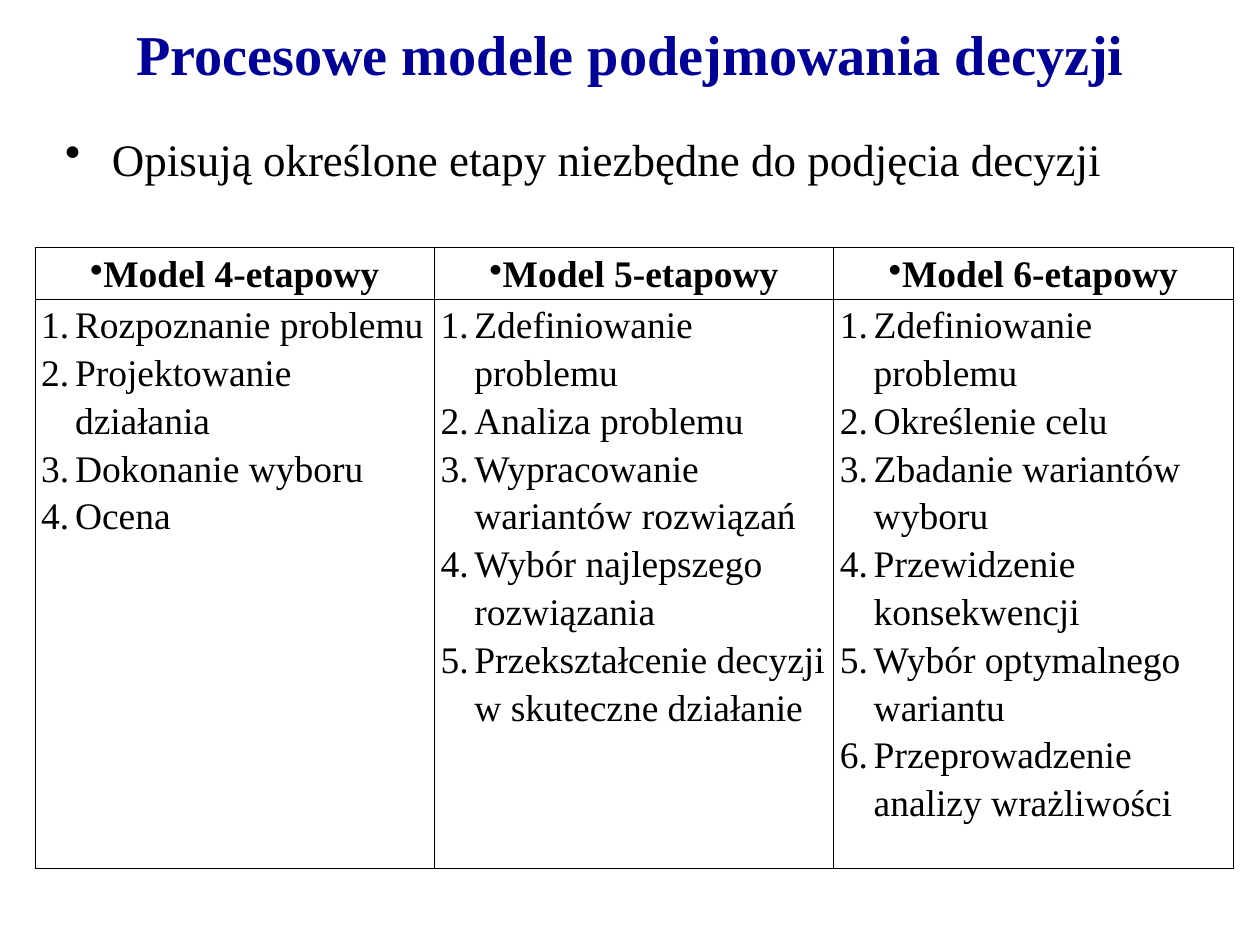
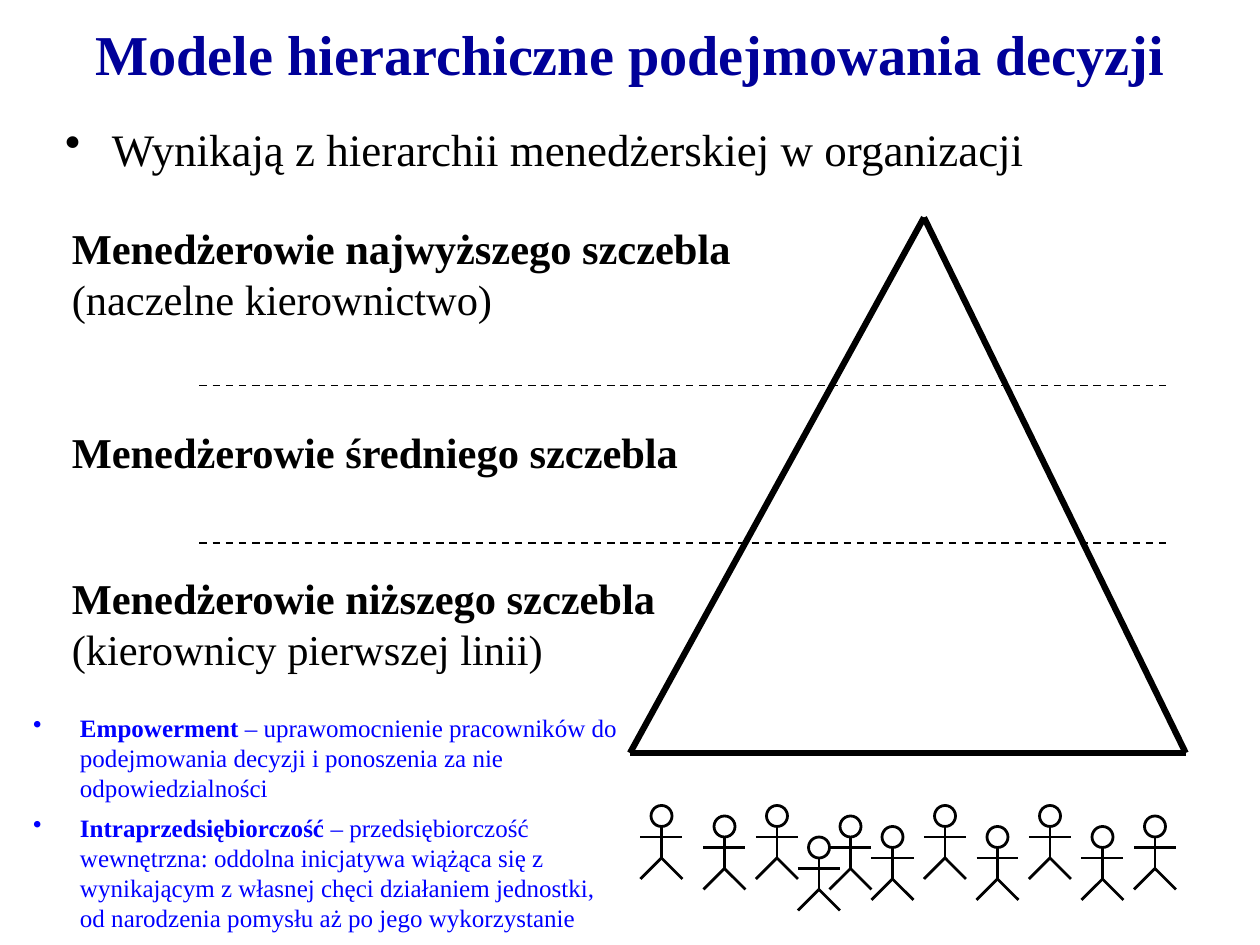
from lxml import etree
from pptx import Presentation
from pptx.dml.color import RGBColor
from pptx.enum.dml import MSO_LINE
from pptx.enum.shapes import MSO_CONNECTOR, MSO_SHAPE
from pptx.enum.text import MSO_ANCHOR, MSO_AUTO_SIZE, PP_ALIGN
from pptx.oxml.ns import qn
from pptx.util import Pt

BLACK = RGBColor(0x00, 0x00, 0x00)
WHITE = RGBColor(0xFF, 0xFF, 0xFF)
NAVY = RGBColor(0x00, 0x00, 0x99)
BLUE = RGBColor(0x00, 0x00, 0xFF)
FONT = "Times New Roman"

# Shared text formats
TITLE = dict(name=FONT, size=Pt(45), bold=True)
BODY = dict(name=FONT, size=Pt(36), bold=False)
LEVEL = dict(name=FONT, size=Pt(34), bold=True)
NOTE = dict(name=FONT, size=Pt(20), bold=False)
HEADER = dict(name=FONT, size=Pt(30), bold=True)
STAGE = dict(HEADER, bold=False)

# Text frame margins: left, top, right, bottom
WIDE_MARGINS = (10, 5, 10, 5)
LEVEL_MARGINS = (7.2, 3.6, 7.2, 3.6)
CELL_MARGINS = (5, 0, 5, 0)
SIDES = ("left", "top", "right", "bottom")

MODELS = {
    "Model 4-etapowy": [
        "Rozpoznanie problemu", "Projektowanie działania", "Dokonanie wyboru", "Ocena",
    ],
    "Model 5-etapowy": [
        "Zdefiniowanie problemu", "Analiza problemu", "Wypracowanie wariantów rozwiązań",
        "Wybór najlepszego rozwiązania", "Przekształcenie decyzji w skuteczne działanie",
    ],
    "Model 6-etapowy": [
        "Zdefiniowanie problemu", "Określenie celu", "Zbadanie wariantów wyboru",
        "Przewidzenie konsekwencji", "Wybór optymalnego wariantu",
        "Przeprowadzenie analizy wrażliwości",
    ],
}

# Text, bold, space before
LEVELS = [
    ("Menedżerowie najwyższego szczebla", True, 0),
    ("(naczelne kierownictwo)", False, 0),
    ("Menedżerowie średniego szczebla", True, 81.6),
    ("Menedżerowie niższego szczebla", True, 76),
    ("(kierownicy pierwszej linii)", False, 0),
]

TERMS = [
    ("Empowerment", " – uprawomocnienie pracowników do podejmowania decyzji"
     " i ponoszenia za nie odpowiedzialności"),
    ("Intraprzedsiębiorczość", " – przedsiębiorczość wewnętrzna: oddolna inicjatywa"
     " wiążąca się z wynikającym z własnej chęci działaniem jednostki,"
     " od narodzenia pomysłu aż po jego wykorzystanie"),
]

# Column and row of each employee, counted in grid units
EMPLOYEES = [(0, 0), (6, 1), (11, 0), (15, 3), (18, 1), (22, 2),
             (27, 0), (32, 2), (37, 0), (42, 2), (47, 1)]


def set_margins(owner, margins):
    for side, margin in zip(SIDES, margins):
        setattr(owner, f"margin_{side}", Pt(margin))


def write(paragraph, text, style, color=BLACK):
    run = paragraph.add_run()
    run.text = text
    for key, value in style.items():
        setattr(run.font, key, value)
    run.font.color.rgb = color


def add_bullet(paragraph, indent=0, numbered=False):
    properties = paragraph._p.get_or_add_pPr()
    properties.set("marL", str(Pt(indent)))
    properties.set("indent", str(-Pt(indent)))
    if numbered:
        etree.SubElement(properties, qn("a:buAutoNum"), type="arabicPeriod")
    else:
        etree.SubElement(properties, qn("a:buFontTx"))
        etree.SubElement(properties, qn("a:buChar"), char="•")


def next_paragraph(frame, index):
    return frame.add_paragraph() if index else frame.paragraphs[0]


def add_text_frame(slide, box, margins=WIDE_MARGINS, wrap=True):
    frame = slide.shapes.add_textbox(*map(Pt, box)).text_frame
    frame.word_wrap = wrap
    set_margins(frame, margins)
    return frame


def add_line(shapes, start, end, width, dash=None):
    line = shapes.add_connector(MSO_CONNECTOR.STRAIGHT, *map(Pt, (*start, *end)))
    line.line.width = Pt(width)
    line.line.color.rgb = BLACK
    if dash:
        line.line.dash_style = dash
    etree.SubElement(line._element.spPr, qn("a:effectLst"))


def add_title(slide, text):
    frame = add_text_frame(slide, (0, 8.6, 1008, 67))
    frame.vertical_anchor = MSO_ANCHOR.MIDDLE
    frame.paragraphs[0].alignment = PP_ALIGN.CENTER
    write(frame.paragraphs[0], text, TITLE, NAVY)


def add_statement(slide, box, text):
    statement = add_text_frame(slide, box).paragraphs[0]
    add_bullet(statement, 37.5)
    write(statement, text, BODY)


def add_cell_border(cell):
    properties = cell._tc.get_or_add_tcPr()
    for position, edge in enumerate(("a:lnL", "a:lnR", "a:lnT", "a:lnB")):
        border = etree.Element(qn(edge), w=str(Pt(0.75)))
        fill = etree.SubElement(border, qn("a:solidFill"))
        etree.SubElement(fill, qn("a:srgbClr"), val=str(BLACK))
        properties.insert(position, border)


def add_models_table(slide, box):
    left, top, width, height = box
    header_height = 39
    table = slide.shapes.add_table(2, len(MODELS), *map(Pt, box)).table
    table.first_row = table.horz_banding = False
    table.rows[0].height = Pt(header_height)
    table.rows[1].height = Pt(height - header_height)
    for column, (model, stages) in enumerate(MODELS.items()):
        table.columns[column].width = Pt(width / len(MODELS))
        header, body = table.cell(0, column), table.cell(1, column)
        for cell in (header, body):
            set_margins(cell, CELL_MARGINS)
            cell.fill.solid()
            cell.fill.fore_color.rgb = WHITE
            add_cell_border(cell)
        # Model name
        heading = header.text_frame.paragraphs[0]
        heading.alignment = PP_ALIGN.CENTER
        heading.line_spacing = 1.15
        add_bullet(heading)
        write(heading, model, HEADER)
        # Numbered stages
        for index, stage in enumerate(stages):
            item = next_paragraph(body.text_frame, index)
            item.line_spacing = 1.15
            add_bullet(item, 27, numbered=True)
            write(item, stage, STAGE)


def add_levels(slide, box):
    frame = add_text_frame(slide, box, LEVEL_MARGINS, wrap=False)
    frame.auto_size = MSO_AUTO_SIZE.SHAPE_TO_FIT_TEXT
    for index, (text, bold, gap) in enumerate(LEVELS):
        level = next_paragraph(frame, index)
        if gap:
            level.space_before = Pt(gap)
        write(level, text, dict(LEVEL, bold=bold))


def add_pyramid(slide, box):
    left, top, width, height = box
    shapes = slide.shapes.add_group_shape().shapes
    apex = (left + 235.2, top)
    base_left, base_right = (left, top + height), (left + width, top + height)
    for start, end in ((apex, base_left), (apex, base_right), (base_left, base_right)):
        add_line(shapes, start, end, 5)
    # Dividers between management levels
    for drop in (134.4, 260.4):
        add_line(shapes, (left - 344.4, top + drop), (left + 428.4, top + drop),
                 1.5, MSO_LINE.DASH)


def add_employee(shapes, left, top, unit):
    def at(column, row):
        return left + column * unit, top + row * unit

    head = shapes.add_shape(MSO_SHAPE.FLOWCHART_CONNECTOR,
                            *map(Pt, (*at(1, 0), 2 * unit, 2 * unit)))
    head.shadow.inherit = False
    head.fill.solid()
    head.fill.fore_color.rgb = WHITE
    head.line.color.rgb = BLACK
    head.line.width = Pt(2.25)
    # Torso, legs and arms
    hip = at(2, 5)
    for start, end in ((at(2, 2), hip), (hip, at(0, 7)), (hip, at(4, 7)),
                       (at(0, 3), at(4, 3))):
        add_line(shapes, start, end, 2.25)


def add_employees(slide, left, top, unit):
    shapes = slide.shapes.add_group_shape().shapes
    for column, row in EMPLOYEES:
        add_employee(shapes, left + column * unit, top + row * unit, unit)


def add_terms(slide, box):
    frame = add_text_frame(slide, box)
    for index, (term, meaning) in enumerate(TERMS):
        entry = next_paragraph(frame, index)
        if index:
            entry.space_before = Pt(4)
        entry.space_after = Pt(4)
        add_bullet(entry, 37.5)
        write(entry, term, dict(NOTE, bold=True), BLUE)
        write(entry, meaning, NOTE, BLUE)


def build_process_slide(slide):
    add_statement(slide, (42, 100, 932, 76),
                  "Opisują określone etapy niezbędne do podjęcia decyzji")
    add_title(slide, "Procesowe modele podejmowania decyzji")
    add_models_table(slide, (28, 198, 958.5, 463.5))


def build_hierarchy_slide(slide):
    add_statement(slide, (42, 92, 932, 81),
                  "Wynikają z hierarchii menedżerskiej w organizacji")
    add_title(slide, "Modele hierarchiczne podejmowania decyzji")
    add_levels(slide, (50.4, 174, 556.5, 373))
    add_pyramid(slide, (504, 174, 444.6, 428.4))
    add_employees(slide, 512.4, 644.4, 8.4)
    add_terms(slide, (16.5, 565, 487.5, 81.5))


def main():
    presentation = Presentation()
    presentation.slide_width, presentation.slide_height = Pt(1008), Pt(756)
    for build in (build_process_slide, build_hierarchy_slide):
        build(presentation.slides.add_slide(presentation.slide_layouts[6]))
    presentation.save("out.pptx")


if __name__ == "__main__":
    main()
